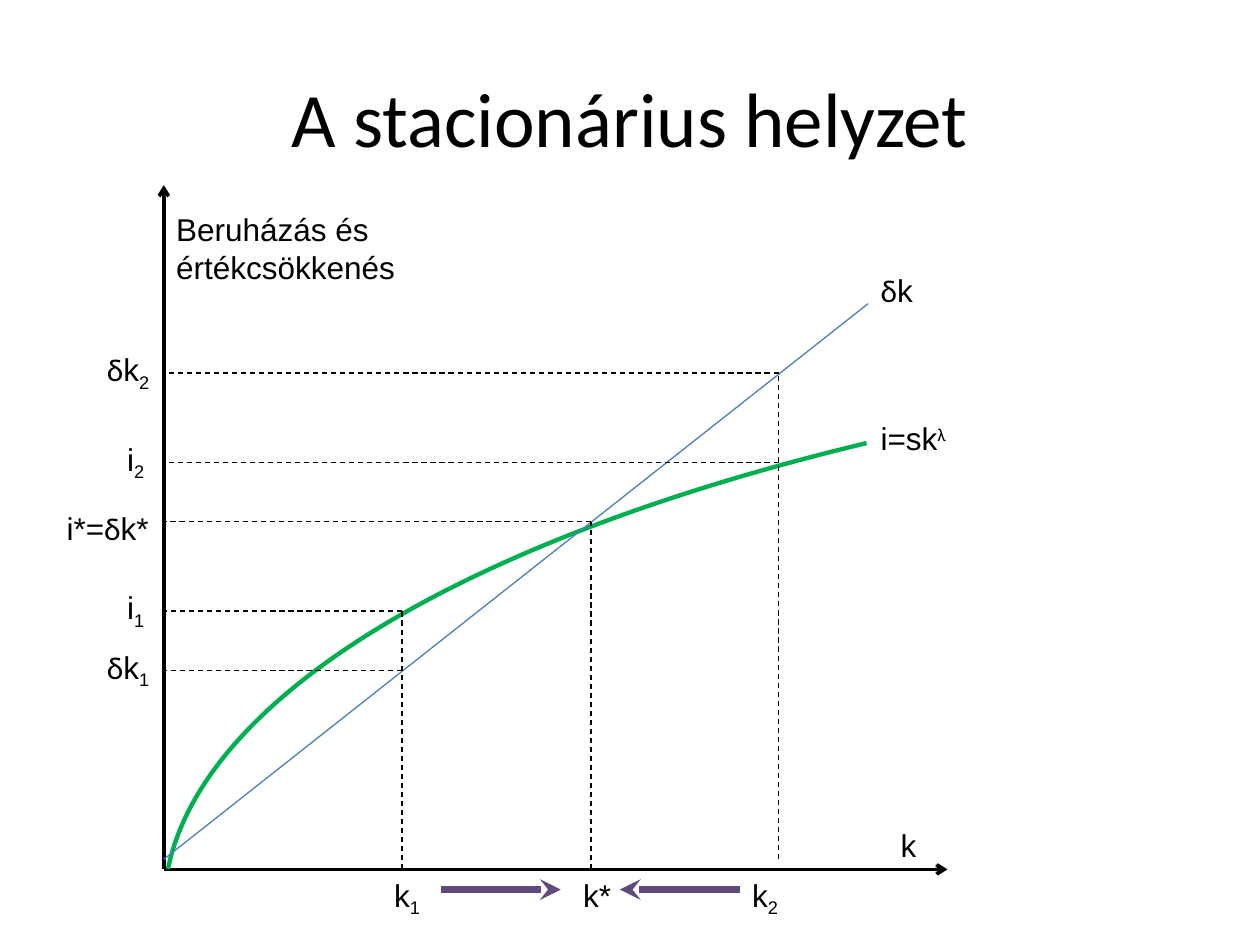
"""Build the slide of the steady state diagram of capital, investment and depreciation."""
import pptx
import pptx.util
import pptx.dml.color
import pptx.enum.dml
import pptx.enum.shapes
import pptx.enum.text
import pptx.oxml
import pptx.oxml.ns

Inches = pptx.util.Inches
Pt = pptx.util.Pt

COLORS = {"ink": "000000", "investment": "00B050", "depreciation": "4B7EBC", "motion": "604A7B"}
ORIGIN_X, ORIGIN_Y = 1.3, 6.9
CAPITAL = {"k1": 3.19, "k*": 4.69, "k2": 6.18}
LEVELS = [("k1", 4.85), ("k1", 5.32), ("k*", 4.14), ("k2", 3.67), ("k2", 2.96)]
DROPS = [("k1", 4.85, ORIGIN_Y), ("k*", 4.14, ORIGIN_Y), ("k2", 2.96, 6.82)]
DELTA = ("δ", "Calibri", 0)
SUB_1 = ("1", "Arial", -25)
SUB_2 = ("2", "Arial", -25)


def plain(text):
    return (text, "Arial", 0)


LABELS = [
    (7.05, 6.51, 0.55, [plain("k")]),
    (3.03, 6.9, 0.55, [plain("k"), SUB_1]),
    (4.53, 6.9, 0.55, [plain("k*")]),
    (5.87, 6.9, 0.55, [plain("k"), SUB_2]),
    (0.75, 5.09, 0.55, [DELTA, plain("k"), SUB_1]),
    (0.75, 2.73, 0.55, [DELTA, plain("k"), SUB_2]),
    (0.91, 4.62, 0.55, [plain("i"), SUB_1]),
    (0.91, 3.44, 0.55, [plain("i"), SUB_2]),
    (0.43, 3.99, 1.3, [plain("i*="), DELTA, plain("k*")]),
    (6.89, 2.1, 0.55, [DELTA, plain("k")]),
    (6.89, 3.28, 1.5, [plain("i=sk"), ("λ", "Calibri", 30)]),
]


def rgb(name):
    return pptx.dml.color.RGBColor.from_string(COLORS[name])


def add_text(page, spans, left, top, width, height=0.4, size=18, align=None, anchor=None, grow=True):
    box = page.shapes.add_textbox(Inches(left), Inches(top), Inches(width), Inches(height))
    frame = box.text_frame
    frame.word_wrap = True
    if grow:
        frame.auto_size = pptx.enum.text.MSO_AUTO_SIZE.SHAPE_TO_FIT_TEXT
    if anchor is not None:
        frame.vertical_anchor = anchor
    para = frame.paragraphs[0]
    para.alignment = align
    for text, font, baseline in spans:
        span = para.add_run()
        span.text = text
        span.font.name = font
        span.font.size = Pt(size)
        span.font.color.rgb = rgb("ink")
        if baseline:
            span.font._element.set("baseline", str(baseline * 1000))


def add_line(page, start, end, color="ink", width=0.75, dashed=False, arrow=None):
    line = page.shapes.add_connector(
        pptx.enum.shapes.MSO_CONNECTOR.STRAIGHT, *(Inches(value) for value in start + end))
    line.line.color.rgb = rgb(color)
    line.line.width = Pt(width)
    if dashed:
        line.line.dash_style = pptx.enum.dml.MSO_LINE.DASH
    if arrow:
        tip = pptx.oxml.parse_xml(
            f'<a:tailEnd {pptx.oxml.ns.nsdecls("a")} type="{arrow}"/>')
        line.line._get_or_add_ln().append(tip)
    effects = pptx.oxml.parse_xml(f'<a:effectLst {pptx.oxml.ns.nsdecls("a")}/>')
    line._element.spPr.append(effects)


def add_investment_curve(page):
    curve = page.shapes.add_shape(
        pptx.enum.shapes.MSO_SHAPE.ARC, Inches(ORIGIN_X), Inches(2.73), Inches(25.67), Inches(8.98))
    curve.adjustments[0] = 108.87
    curve.adjustments[1] = 124.22
    curve.shadow.inherit = False
    curve.fill.background()
    curve.line.color.rgb = rgb("investment")
    curve.line.width = Pt(2.5)


def add_guides(page):
    for name, top, bottom in DROPS:
        add_line(page, (CAPITAL[name], bottom), (CAPITAL[name], top), dashed=True)
    for name, level in LEVELS:
        add_line(page, (CAPITAL[name], level), (ORIGIN_X, level), dashed=True)


def main():
    deck = pptx.Presentation()
    deck.slide_width, deck.slide_height = Inches(10), Inches(7.5)
    page = deck.slides.add_slide(deck.slide_layouts[6])
    add_text(page, [("A stacionárius helyzet", "Calibri", 0)], 0.5, 0.3, 9, 1.25, size=44,
             align=pptx.enum.text.PP_ALIGN.CENTER, anchor=pptx.enum.text.MSO_ANCHOR.MIDDLE, grow=False)
    for end in [(ORIGIN_X, 1.47), (7.52, ORIGIN_Y)]:
        add_line(page, (ORIGIN_X, ORIGIN_Y), end, width=2, arrow="arrow")
    add_investment_curve(page)
    add_line(page, (ORIGIN_X, 6.82), (6.89, 2.41), color="depreciation")
    add_guides(page)
    add_text(page, [plain("Beruházás és értékcsökkenés")], ORIGIN_X, 1.62, 1.97, 0.71)
    for left, top, width, spans in LABELS:
        add_text(page, spans, left, top, width)
    for start, end in [(3.5, 4.45), (5.87, 4.92)]:
        add_line(page, (start, 7.06), (end, 7.06), color="motion", width=4, arrow="stealth")
    deck.save("out.pptx")


if __name__ == "__main__":
    main()
